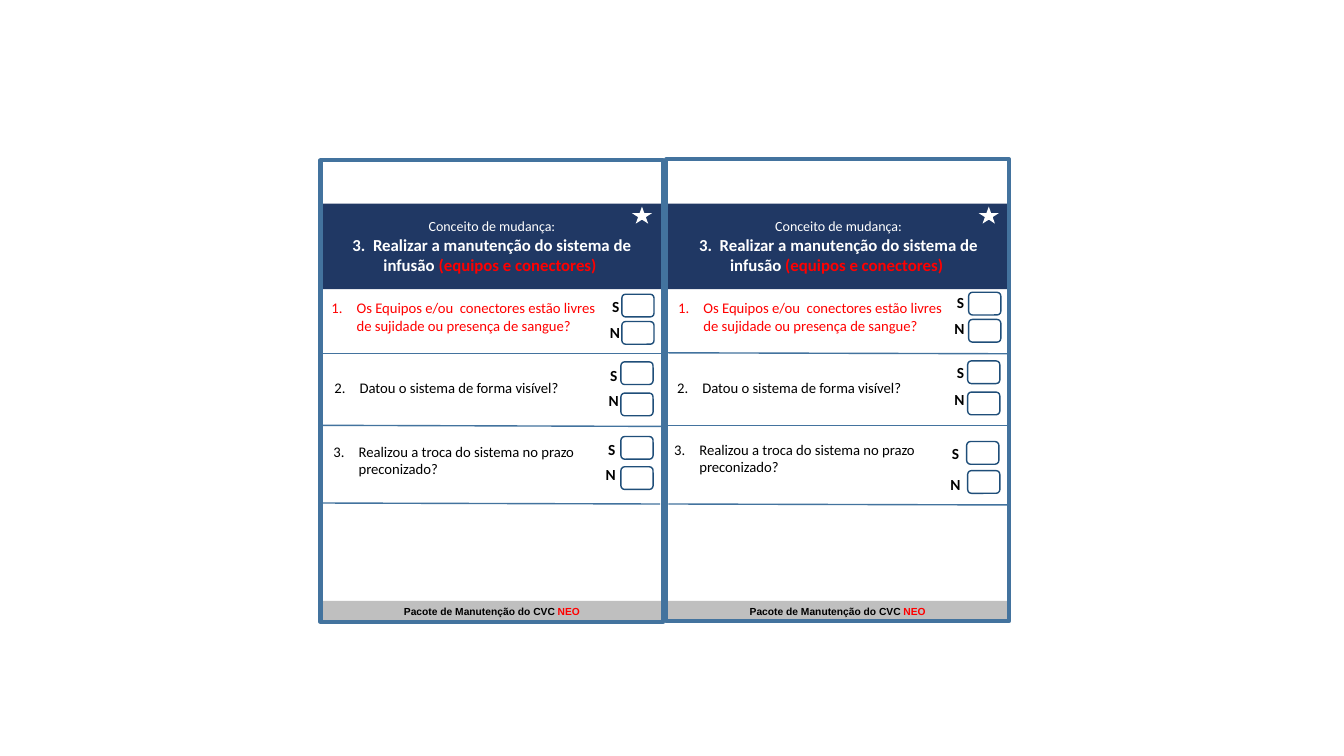
from lxml import etree
from pptx import Presentation
from pptx import util as u
from pptx.dml.color import RGBColor
from pptx.enum import shapes, text
from pptx.oxml import ns

NAVY = RGBColor(0x20, 0x38, 0x64)
INK_BLUE = RGBColor(0x1F, 0x4E, 0x79)
STEEL = RGBColor(0x43, 0x73, 0x9E)
GREY = RGBColor(0xBF, 0xBF, 0xBF)
WHITE = RGBColor(0xFF, 0xFF, 0xFF)
BLACK = RGBColor(0, 0, 0)
RED = RGBColor(0xFF, 0, 0)

RECT = shapes.MSO_SHAPE.RECTANGLE
ROUND = shapes.MSO_SHAPE.ROUNDED_RECTANGLE
STAR = shapes.MSO_SHAPE.STAR_5_POINT

CARD_WIDTH, CARD_HEIGHT = 244.8, 329.8
BOX_WIDTH, BOX_HEIGHT = 23, 16.2
INDENT = 18
BLANK_LINE = 12.8

QUESTIONS = [
    ("Os Equipos e/ou  conectores estão livres de sujidade ou presença de sangue?", RED),
    ("Datou o sistema de forma visível?", BLACK),
    ("Realizou a troca do sistema no prazo preconizado?", BLACK),
]
# Width, height and bottom inset of each question's text box
QUESTION_FRAMES = [(208, 63.4, 3.6 + BLANK_LINE), (198.7, 63.4, 3.6 + BLANK_LINE),
                   (201.6, 36.7, 3.6)]

# Horizontal places are measured from the left edge of each card.
# Each row: question, S label, S box, N label, N box as (x, y)
CARDS = [
    dict(left=229, top=114.5, header=0, star=222.4,
         rows=[[(0.7, 200.9), (202.3, 212.4), (215.2, 210.2), (201.6, 232.6), (215.2, 229.7)],
               [(2.8, 251.3), (200.8, 262.1), (214.5, 258.5), (200.8, 280.8), (214.5, 280.8)],
               [(2.1, 310.3), (199.4, 314.6), (214.5, 311.8), (198.7, 334.1), (214.5, 333.4)]],
         dividers=[(0, 252.7, 252.7), (0, 303.8, 304.6), (-1.5, 359.3, 360)]),
    dict(left=476, top=113.8, header=0.6, star=223.1,
         rows=[[(1.4, 200.9), (201.5, 210.2), (215.9, 208.8), (200.8, 229.7), (215.9, 228.2)],
               [(0.6, 251.3), (201.5, 259.9), (215.2, 257.8), (200.8, 280.1), (215.2, 280.1)],
               [(-1.5, 308.9), (197.9, 317.5), (214.5, 315.4), (197.9, 340.6), (215.2, 336.2)]],
         dividers=[(0.6, 252, 252.7), (0.6, 303.8, 303.8), (1.4, 360, 360.7)]),
]


def add_span(para, words, size=11, color=BLACK, bold=False, font="Calibri"):
    span = para.add_run()
    span.text = words
    span.font.name = font
    span.font.size = u.Pt(size)
    span.font.bold = bold
    span.font.color.rgb = color


class CardSheet:
    """Draws the elements of the audit cards on one slide."""

    def __init__(self, page):
        self.page = page

    def shape(self, kind, left, top, width, height, fill=None, line=None, weight=1):
        box = self.page.shapes.add_shape(kind, *map(u.Pt, (left, top, width, height)))
        box.shadow.inherit = False
        if fill is None:
            box.fill.background()
        else:
            box.fill.solid()
            box.fill.fore_color.rgb = fill
        if line is None:
            box.line.fill.background()
        else:
            box.line.color.rgb = line
            box.line.width = u.Pt(weight)
        return box

    def prepare(self, box, align, bottom=3.6):
        frame = box.text_frame
        frame.word_wrap = True
        frame.vertical_anchor = text.MSO_ANCHOR.MIDDLE
        frame.margin_bottom = u.Pt(bottom)
        frame.paragraphs[0].alignment = align
        return frame

    def textbox(self, left, top, width, height, align, bottom=3.6):
        box = self.page.shapes.add_textbox(*map(u.Pt, (left, top, width, height)))
        return self.prepare(box, align, bottom)

    def label(self, letter, left, top, height):
        frame = self.textbox(left, top, 17.3, height, text.PP_ALIGN.CENTER, 0)
        frame.margin_left = frame.margin_right = frame.margin_top = 0
        add_span(frame.paragraphs[0], letter, bold=True)

    def question(self, number, left, top):
        words, color = QUESTIONS[number - 1]
        width, height, bottom = QUESTION_FRAMES[number - 1]
        frame = self.textbox(left, top, width, height, text.PP_ALIGN.LEFT, bottom)
        para = frame.paragraphs[0]
        add_span(para, words, size=10.5, color=color)
        props = para._p.get_or_add_pPr()
        props.set("marL", str(u.Pt(INDENT)))
        props.set("indent", str(-u.Pt(INDENT)))
        etree.SubElement(props, ns.qn("a:buFont"), typeface="+mj-lt")
        etree.SubElement(props, ns.qn("a:buAutoNum"), type="arabicPeriod", startAt=str(number))

    def divider(self, left, start_y, end_y):
        line = self.page.shapes.add_connector(
            shapes.MSO_CONNECTOR.STRAIGHT,
            *map(u.Pt, (left, start_y, left + 244, end_y)))
        line.line.color.rgb = STEEL
        line.line.width = u.Pt(1)
        etree.SubElement(line._element.spPr, ns.qn("a:effectLst"))

    def header(self, left, top):
        box = self.shape(RECT, left, top, CARD_WIDTH, 61.2, fill=NAVY)
        frame = self.prepare(box, text.PP_ALIGN.CENTER)
        add_span(frame.paragraphs[0], "Conceito de mudança:", size=10, color=WHITE)
        para = frame.add_paragraph()
        para.alignment = text.PP_ALIGN.CENTER
        add_span(para, "3.  Realizar a manutenção do sistema de infusão ",
                 size=12, color=WHITE, bold=True)
        add_span(para, "(equipos e conectores) ", size=12, color=RED, bold=True)

    def footer(self, left, top):
        box = self.shape(RECT, left, top, CARD_WIDTH, 15.8, fill=GREY)
        para = self.prepare(box, text.PP_ALIGN.CENTER).paragraphs[0]
        add_span(para, "Pacote de Manutenção do CVC ", size=7.3, bold=True, font="Arial")
        add_span(para, "NEO", size=7.3, color=RED, bold=True, font="Arial")

    def card(self, left, top, header, star, rows, dividers):
        # Bands and frame
        self.footer(left, 429.1)
        self.header(left + header, 145.4)
        self.shape(RECT, left, top, CARD_WIDTH, CARD_HEIGHT, line=STEEL, weight=3)
        self.shape(STAR, left + star, 147.6, 14.4, 12.2, fill=WHITE)
        # Questions with their yes and no boxes
        for number, (question, *answers) in enumerate(rows, 1):
            self.question(number, left + question[0], question[1])
            yes_label, yes_box, no_label, no_box = answers
            for x, y in (yes_box, no_box):
                self.shape(ROUND, left + x, y, BOX_WIDTH, BOX_HEIGHT, line=INK_BLUE)
            self.label("S", left + yes_label[0], yes_label[1], 12.2)
            self.label("N", left + no_label[0], no_label[1], 10.1)
        # Row dividers
        for x, start_y, end_y in dividers:
            self.divider(left + x, start_y, end_y)


def main():
    deck = Presentation()
    deck.slide_width, deck.slide_height = u.Pt(960), u.Pt(540)
    sheet = CardSheet(deck.slides.add_slide(deck.slide_layouts[6]))
    for card in CARDS:
        sheet.card(**card)
    deck.save("out.pptx")


if __name__ == "__main__":
    main()
